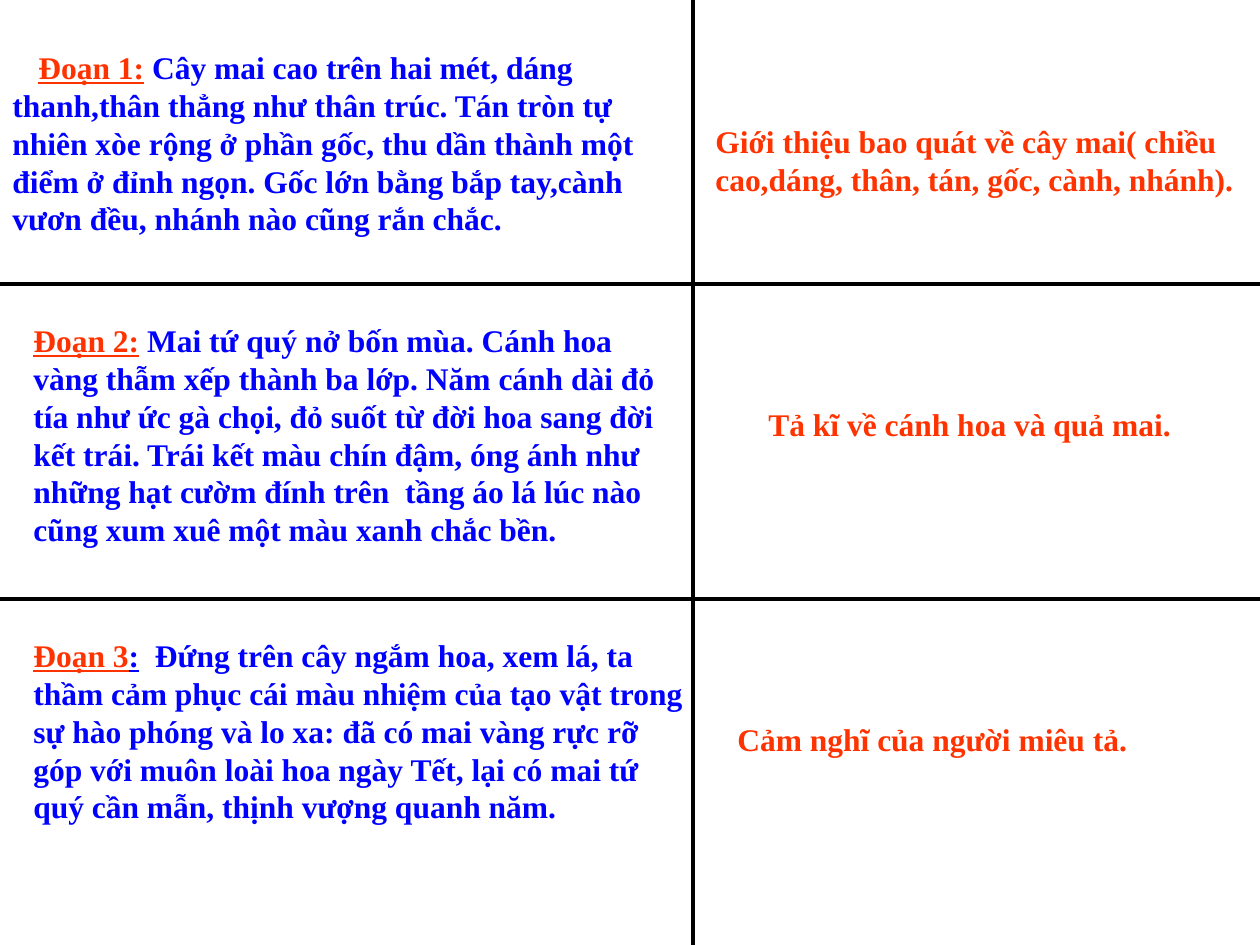
from dataclasses import dataclass

from lxml.etree import SubElement
from pptx import Presentation
from pptx.dml.color import RGBColor
from pptx.enum.shapes import MSO_CONNECTOR
from pptx.enum.text import MSO_AUTO_SIZE
from pptx.oxml.ns import qn
from pptx.util import Emu, Pt

PX = 914400 // 126
WIDTH, HEIGHT = 1260, 945
COLUMN_X = 693
ROW_YS = (284, 599)


@dataclass(frozen=True)
class Theme:
    font: str = "Times New Roman"
    size: Pt = Pt(18)
    accent: RGBColor = RGBColor(0xFF, 0x33, 0x00)
    body: RGBColor = RGBColor(0x00, 0x00, 0xFF)
    rule: RGBColor = RGBColor(0x00, 0x00, 0x00)
    rule_width: Pt = Pt(2.25)


THEME = Theme()

# Each passage: box in px, first-line indent in px, runs of (text, colour, underlined)
PASSAGES = [
    ((0, 42, 703, 202), 26, [
        ("Đoạn 1:", THEME.accent, True),
        (" Cây mai cao trên hai mét, dáng thanh,thân thẳng như thân trúc. "
         "Tán tròn tự nhiên xòe rộng ở phần gốc, thu dần thành một điểm ở đỉnh ngọn. "
         "Gốc lớn bằng bắp tay,cành vươn đều, nhánh nào cũng rắn chắc.", THEME.body, False),
    ]),
    ((21, 315, 651, 239), 0, [
        ("Đoạn 2:", THEME.accent, True),
        (" Mai tứ quý nở bốn mùa. Cánh hoa vàng thẫm xếp thành ba lớp. "
         "Năm cánh dài đỏ tía như ức gà chọi, đỏ suốt từ đời hoa sang đời kết trái. "
         "Trái kết màu chín đậm, óng ánh như  những hạt cườm đính trên  tầng áo lá "
         "lúc nào cũng xum xuê một màu xanh chắc bền.", THEME.body, False),
    ]),
    ((21, 630, 683, 202), 0, [
        ("Đoạn 3", THEME.accent, True),
        (":", THEME.body, True),
        ("  Đứng trên cây ngắm hoa, xem lá, ta thầm cảm phục cái màu nhiệm của tạo vật "
         "trong sự hào phóng và lo xa: đã có mai vàng rực rỡ góp với muôn loài hoa "
         "ngày Tết, lại có mai tứ quý cần mẫn, thịnh vượng quanh năm.", THEME.body, False),
    ]),
]

SUMMARIES = [
    ((703, 116, 557, 88),
     "Giới thiệu bao quát về cây mai( chiều cao,dáng, thân, tán, gốc, cành, nhánh)."),
    ((756, 399, 462, 50), "Tả kĩ về cánh hoa và quả mai."),
    ((725, 714, 504, 50), "Cảm nghĩ của người miêu tả."),
]


def px(n):
    return Emu(n * PX)


def add_text(s, box, runs, indent=0):
    tf = s.shapes.add_textbox(*map(px, box)).text_frame
    tf.word_wrap = True
    tf.auto_size = MSO_AUTO_SIZE.SHAPE_TO_FIT_TEXT
    p = tf.paragraphs[0]
    if indent:
        p._p.get_or_add_pPr().set("indent", str(px(indent)))
    for text, color, underlined in runs:
        r = p.add_run()
        r.text = text
        r.font.name = THEME.font
        r.font.size = THEME.size
        r.font.bold = True
        r.font.underline = underlined
        r.font.color.rgb = color


def add_rule(s, x1, y1, x2, y2):
    line = s.shapes.add_connector(MSO_CONNECTOR.STRAIGHT, *map(px, (x1, y1, x2, y2)))
    line.line.color.rgb = THEME.rule
    line.line.width = THEME.rule_width
    SubElement(line._element.spPr, qn("a:effectLst"))


def main():
    prs = Presentation()
    prs.slide_width, prs.slide_height = px(WIDTH), px(HEIGHT)
    s = prs.slides.add_slide(prs.slide_layouts[6])
    for box, indent, runs in PASSAGES:
        add_text(s, box, runs, indent)
    add_rule(s, COLUMN_X, 0, COLUMN_X, HEIGHT)
    for y in ROW_YS:
        add_rule(s, 0, y, WIDTH, y)
    for box, text in SUMMARIES:
        add_text(s, box, [(text, THEME.accent, False)])
    prs.save("out.pptx")


if __name__ == "__main__":
    main()
